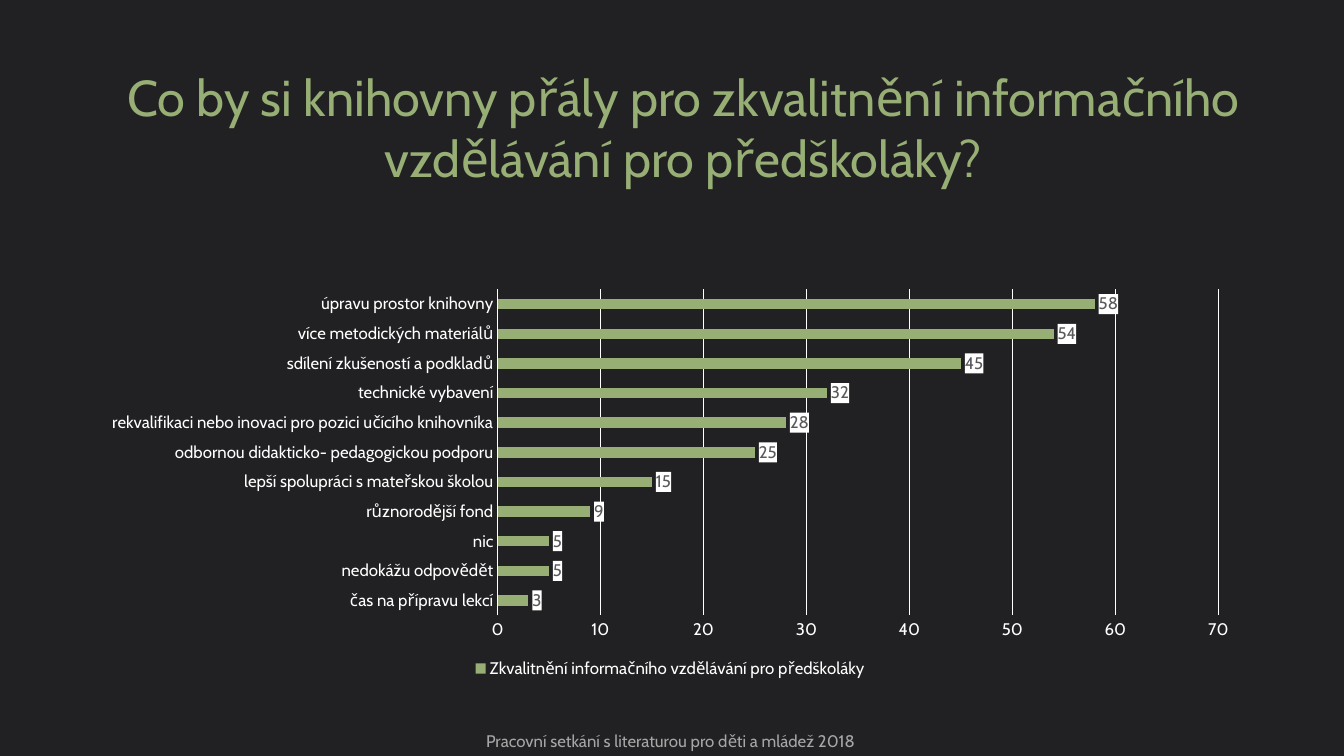
from lxml import etree
from pptx import Presentation
from pptx.chart.data import CategoryChartData
from pptx.dml.color import RGBColor
from pptx.enum.chart import XL_CHART_TYPE, XL_LABEL_POSITION, XL_LEGEND_POSITION, XL_TICK_MARK
from pptx.enum.text import MSO_ANCHOR, PP_ALIGN
from pptx.oxml import parse_xml
from pptx.oxml.ns import nsdecls, qn
from pptx.util import Cm, Pt

BAR_CLUSTERED = XL_CHART_TYPE.BAR_CLUSTERED
OUTSIDE_END = XL_LABEL_POSITION.OUTSIDE_END
LEGEND_BOTTOM = XL_LEGEND_POSITION.BOTTOM
NO_TICK = XL_TICK_MARK.NONE
MIDDLE, BOTTOM = MSO_ANCHOR.MIDDLE, MSO_ANCHOR.BOTTOM
CENTER = PP_ALIGN.CENTER

FONT = "Cabin"
COLORS = {
    "background": "212123",
    "green": "97AF75",
    "white": "FFFFFF",
    "label": "595959",
    "footer": "A6A6A6",
    "outline": "404040",
    "shadow": "000000",
}

TITLE = "Co by si knihovny přály pro zkvalitnění informačního vzdělávání pro předškoláky?"
FOOTER = "Pracovní setkání s literaturou pro děti a mládež 2018"
SERIES_NAME = "Zkvalitnění informačního vzdělávání pro předškoláky"
WISHES = {
    "čas na přípravu lekcí": 3,
    "nedokážu odpovědět": 5,
    "nic": 5,
    "různorodější fond": 9,
    "lepší spolupráci s mateřskou školou": 15,
    "odbornou didakticko- pedagogickou podporu": 25,
    "rekvalifikaci nebo inovaci pro pozici učícího knihovníka": 28,
    "technické vybavení": 32,
    "sdílení zkušeností a podkladů": 45,
    "více metodických materiálů": 54,
    "úpravu prostor knihovny": 58,
}


def rgb(name):
    return RGBColor.from_string(COLORS[name])


def format_font(font, size, color):
    font.name = FONT
    font.size = Pt(size)
    font.bold = False
    font.color.rgb = rgb(color)


def format_line(line, color, width=0.75):
    line.color.rgb = rgb(color)
    line.width = Pt(width)


def add_text(slide, text, left, top, width, height, size, color, anchor=MIDDLE, align=CENTER):
    box = slide.shapes.add_textbox(Cm(left), Cm(top), Cm(width), Cm(height))
    frame = box.text_frame
    frame.word_wrap = True
    frame.vertical_anchor = anchor
    paragraph = frame.paragraphs[0]
    paragraph.alignment = align
    run = paragraph.add_run()
    run.text = text
    format_font(run.font, size, color)
    return run


def add_glow_edge(run):
    """Give the run a faint outline and a soft drop shadow."""
    properties = run.font._element
    properties.insert(0, parse_xml(
        f'<a:ln {nsdecls("a")} w="9525"><a:solidFill><a:srgbClr val="{COLORS["outline"]}">'
        '<a:alpha val="10000"/></a:srgbClr></a:solidFill></a:ln>'))
    properties.find(qn("a:solidFill")).addnext(parse_xml(
        f'<a:effectLst {nsdecls("a")}><a:outerShdw blurRad="38100" dist="25400" dir="2700000">'
        f'<a:srgbClr val="{COLORS["shadow"]}"><a:alpha val="60000"/></a:srgbClr>'
        '</a:outerShdw></a:effectLst>'))


def format_axes(chart):
    categories, values = chart.category_axis, chart.value_axis
    for axis in (categories, values):
        axis.major_tick_mark = axis.minor_tick_mark = NO_TICK
        format_font(axis.tick_labels.font, 12, "white")
    categories.has_major_gridlines = False
    format_line(categories.format.line, "white")
    values.minimum_scale, values.maximum_scale, values.major_unit = 0, 70, 10
    values.format.line.fill.background()
    values.has_major_gridlines = True
    format_line(values.major_gridlines.format.line, "white")


def format_labels(series):
    labels = series.data_labels
    labels.show_value = True
    labels.position = OUTSIDE_END
    format_font(labels.font, 12, "label")
    # White box behind each value
    box = etree.Element(qn("c:spPr"))
    fill = etree.SubElement(box, qn("a:solidFill"))
    etree.SubElement(fill, qn("a:srgbClr"), val=COLORS["white"])
    labels._element.find(qn("c:txPr")).addprevious(box)


def add_bar_chart(slide, left, top, width, height):
    data = CategoryChartData()
    data.categories = list(WISHES)
    data.add_series(SERIES_NAME, list(WISHES.values()))
    frame = slide.shapes.add_chart(
        BAR_CLUSTERED, Cm(left), Cm(top), Cm(width), Cm(height), data)
    chart = frame.chart
    format_font(chart.font, 10, "white")
    chart.has_title = False
    chart.has_legend = True
    chart.legend.position = LEGEND_BOTTOM
    chart.legend.include_in_layout = False
    format_font(chart.legend.font, 12, "white")
    format_axes(chart)

    plot = chart.plots[0]
    plot.gap_width = 182
    plot.vary_by_categories = False
    series = plot.series[0]
    series.format.fill.solid()
    series.format.fill.fore_color.rgb = rgb("green")
    format_labels(series)


def main():
    presentation = Presentation()
    presentation.slide_width, presentation.slide_height = Cm(33.87), Cm(19.05)
    slide = presentation.slides.add_slide(presentation.slide_layouts[6])
    slide.background.fill.solid()
    slide.background.fill.fore_color.rgb = rgb("background")

    # Title
    title = add_text(slide, TITLE, 2.24, 1.85, 29.97, 2.69, size=36, color="green")
    add_glow_edge(title)

    # Survey results
    add_bar_chart(slide, 2.24, 7.09, 29.31, 10.11)

    # Footer
    add_text(slide, FOOTER, -0.03, 18.03, 33.87, 1.02, size=12, color="footer", anchor=BOTTOM)

    presentation.save("out.pptx")


if __name__ == "__main__":
    main()
